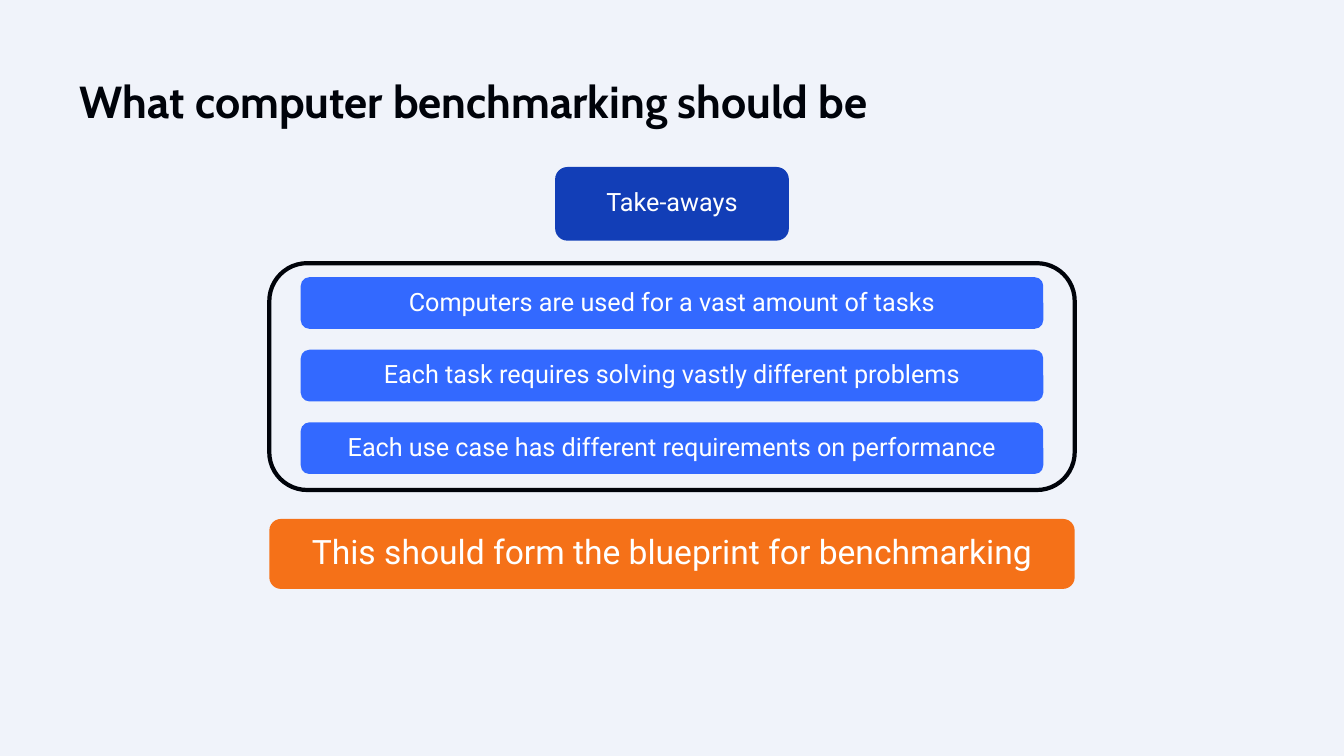
from dataclasses import dataclass
from typing import Optional

from pptx import Presentation
from pptx.dml.color import RGBColor
from pptx.enum.shapes import MSO_SHAPE
from pptx.enum.text import MSO_ANCHOR, MSO_AUTO_SIZE, PP_ALIGN
from pptx.slide import Slide
from pptx.text.text import TextFrame
from pptx.util import Pt


@dataclass(frozen=True)
class Theme:
    background: str = "F0F3FA"
    ink: str = "00030A"
    heading: str = "123EB7"
    claim: str = "3369FF"
    conclusion: str = "F57118"
    on_fill: str = "FFFFFF"
    title_font: str = "Cabin"
    body_font: str = "Roboto"
    title_size: float = 32
    body_size: float = 18
    conclusion_size: float = 24
    frame_line: float = 3


@dataclass(frozen=True)
class Panel:
    top: float
    width: float
    height: float
    fill: Optional[str] = None
    text: str = ""
    size: float = 18


THEME = Theme()
SLIDE_WIDTH, SLIDE_HEIGHT = 960, 540
FRAME_WIDTH = 575.28
CLAIMS_TOP, CLAIM_PITCH = 198, 51.84
CLAIMS = (
    "Computers are used for a vast amount of tasks",
    "Each task requires solving vastly different problems",
    "Each use case has different requirements on performance",
)


def write(frame: TextFrame, text: str, *, font: str, size: float, color: str,
          bold: bool = False, align: PP_ALIGN = PP_ALIGN.LEFT,
          anchor: MSO_ANCHOR = MSO_ANCHOR.TOP, inset: float = 0) -> None:
    frame.word_wrap = True
    frame.auto_size = MSO_AUTO_SIZE.NONE
    frame.vertical_anchor = anchor
    frame.margin_left = frame.margin_right = Pt(inset)
    frame.margin_top = frame.margin_bottom = Pt(inset)
    paragraph = frame.paragraphs[0]
    paragraph.alignment = align
    paragraph.line_spacing = 0.9
    paragraph.space_before = Pt(0)
    run = paragraph.add_run()
    run.text = text
    run.font.name = font
    run.font.size = Pt(size)
    run.font.bold = bold
    run.font.color.rgb = RGBColor.from_string(color)


def draw_title(slide: Slide, text: str) -> None:
    title = slide.shapes.title
    title.left, title.top = Pt(57), Pt(57)
    title.width, title.height = Pt(846), Pt(29)
    write(title.text_frame, text, font=THEME.title_font,
          size=THEME.title_size, color=THEME.ink, bold=True)


def draw_panel(slide: Slide, panel: Panel) -> None:
    left = (SLIDE_WIDTH - panel.width) / 2
    box = slide.shapes.add_shape(
        MSO_SHAPE.ROUNDED_RECTANGLE,
        Pt(left), Pt(panel.top), Pt(panel.width), Pt(panel.height))
    box.shadow.inherit = False
    if panel.fill:
        box.fill.solid()
        box.fill.fore_color.rgb = RGBColor.from_string(panel.fill)
        box.line.fill.background()
    else:
        box.fill.background()
        box.line.color.rgb = RGBColor.from_string(THEME.ink)
        box.line.width = Pt(THEME.frame_line)
    if panel.text:
        write(box.text_frame, panel.text, font=THEME.body_font,
              size=panel.size, color=THEME.on_fill, align=PP_ALIGN.CENTER,
              anchor=MSO_ANCHOR.MIDDLE, inset=11.5)


def main() -> None:
    deck = Presentation()
    deck.slide_width, deck.slide_height = Pt(SLIDE_WIDTH), Pt(SLIDE_HEIGHT)
    slide = deck.slides.add_slide(deck.slide_layouts.get_by_name("Title Only"))
    slide.background.fill.solid()
    slide.background.fill.fore_color.rgb = RGBColor.from_string(THEME.background)

    draw_title(slide, "What computer benchmarking should be")
    heading = Panel(119.3, 167, 52.6, THEME.heading, "Take-aways", THEME.body_size)
    claims = [
        Panel(CLAIMS_TOP + row * CLAIM_PITCH, 530.4, 36.9, THEME.claim, text,
              THEME.body_size)
        for row, text in enumerate(CLAIMS)
    ]
    frame = Panel(188, FRAME_WIDTH, 162)
    conclusion = Panel(370.7, FRAME_WIDTH, 50, THEME.conclusion,
                       "This should form the blueprint for benchmarking",
                       THEME.conclusion_size)
    for panel in (heading, *claims, frame, conclusion):
        draw_panel(slide, panel)

    deck.save("out.pptx")


if __name__ == "__main__":
    main()
